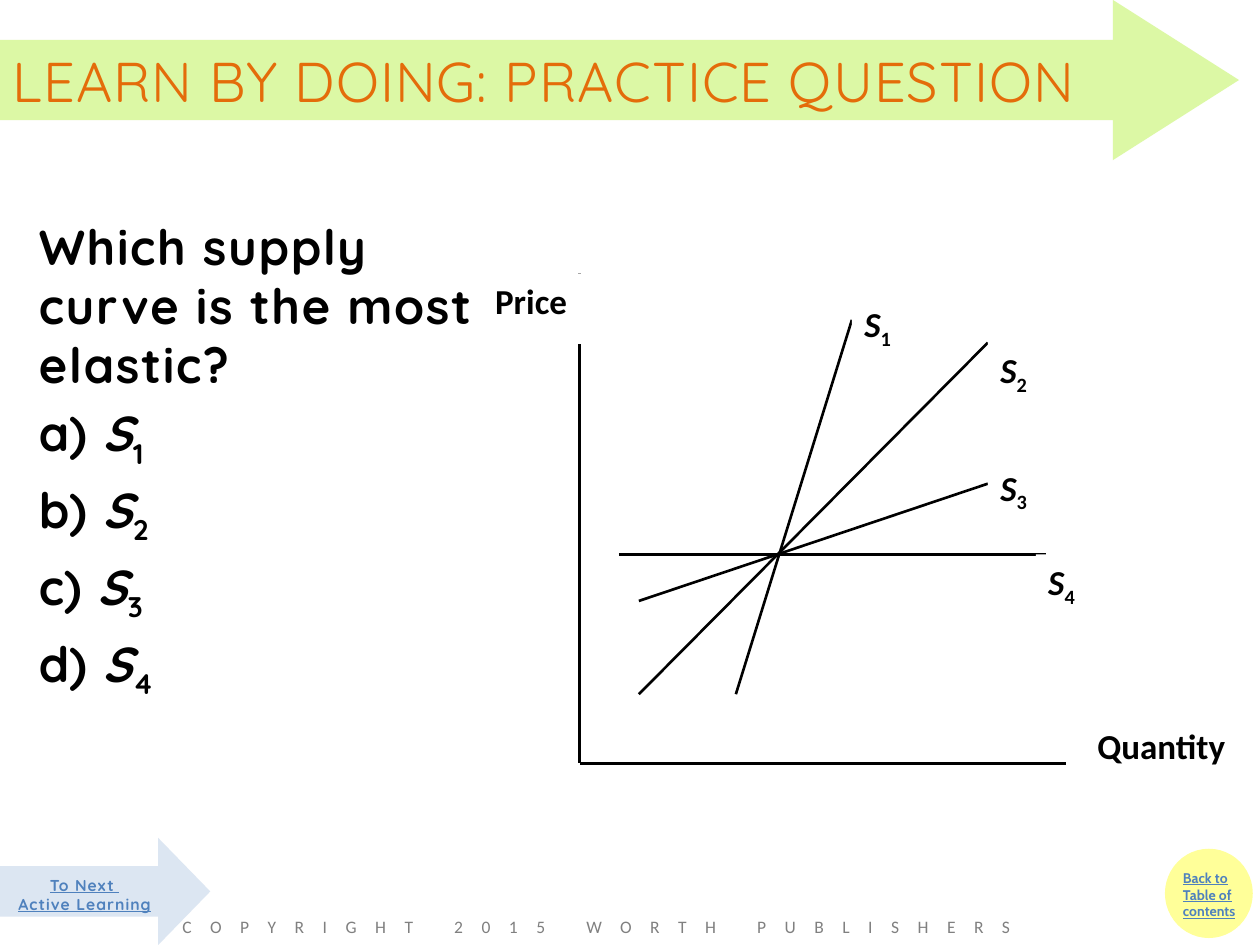
from dataclasses import dataclass
from lxml import etree
from pptx import Presentation
from pptx.dml.color import RGBColor
from pptx.enum.shapes import MSO_CONNECTOR, MSO_SHAPE
from pptx.enum.text import MSO_ANCHOR, PP_ALIGN
from pptx.oxml.ns import qn
from pptx.util import Pt

ARROW, OVAL, RECT = MSO_SHAPE.RIGHT_ARROW, MSO_SHAPE.OVAL, MSO_SHAPE.RECTANGLE
LINE = MSO_CONNECTOR.STRAIGHT
MIDDLE, TOP = MSO_ANCHOR.MIDDLE, MSO_ANCHOR.TOP
LEFT, CENTER = PP_ALIGN.LEFT, PP_ALIGN.CENTER


@dataclass(frozen=True)
class Theme:
    """Hold the colours, fonts and type sizes of the slide."""
    lime: str = "CBF577"
    orange: str = "E46C0A"
    yellow: str = "FFFF99"
    pale: str = "DCE6F2"
    link: str = "4F81BD"
    gray: str = "808080"
    black: str = "000000"
    white: str = "FFFFFF"
    round: str = "Quicksand"
    plain: str = "Calibri"
    small: str = "Cabin"
    title: int = 32
    body: int = 28
    label: int = 20
    foot: int = 10
    next: int = 9
    back: int = 8


T = Theme()


def color(text):
    """Turn a hex string into a colour."""
    return RGBColor.from_string(text)


def style(run, font, size, tint, bold=False, italic=False, line=False, gap=0, base=0):
    """Format one run."""
    face = run.font
    face.name, face.size, face.color.rgb = font, Pt(size), color(tint)
    face.bold, face.italic, face.underline = bold, italic, line
    props = run._r.get_or_add_rPr()
    if gap:
        props.set("spc", str(round(gap * 100)))
    if base:
        props.set("baseline", str(base * 1000))


def curve(para, num, lead="", **look):
    """Write an italic S with a subscript number."""
    parts = ((lead, False, 0), ("S", True, 0), (str(num), False, -25))
    for text, italic, base in parts:
        if text:
            run = para.add_run()
            run.text = text
            style(run, italic=italic, base=base, **look)


def block(slide, kind, box, fill):
    """Place a filled shape without outline or shadow."""
    shape = slide.shapes.add_shape(kind, *map(Pt, box))
    shape.shadow.inherit = False
    shape.fill.solid()
    shape.fill.fore_color.rgb = color(fill)
    shape.line.fill.background()
    return shape


def write(slide, box, lines, align=LEFT, wrap=True, **look):
    """Place a text box with one paragraph for each line."""
    frame = slide.shapes.add_textbox(*map(Pt, box)).text_frame
    frame.word_wrap = wrap
    frame.text = "\n".join(lines)
    for para in frame.paragraphs:
        para.alignment = align
        for run in para.runs:
            style(run, **look)
    return frame


def header(slide, box):
    """Draw the title arrow."""
    shape = block(slide, ARROW, box, T.lime)
    shape.adjustments[0], shape.adjustments[1] = 0.5, 0.787
    tone = shape.fill._xPr.find(".//" + qn("a:srgbClr"))
    etree.SubElement(tone, qn("a:alpha")).set("val", "66000")
    frame = shape.text_frame
    frame.vertical_anchor = MIDDLE
    frame.text = "LEARN BY DOING: PRACTICE QUESTION"
    para = frame.paragraphs[0]
    para.alignment = LEFT
    style(para.runs[0], T.round, T.title, T.orange, gap=0.6)


def back(slide, box):
    """Draw the round link to the contents."""
    left, top, wide, high = box
    shape = block(slide, OVAL, box, T.yellow)
    shape.line.color.rgb = color(T.yellow)
    shape.line.width = Pt(2)
    write(slide, (left + 2.2, top + 7.2, wide + 3.6, high - 0.8),
          ["Back to Table of contents"], font=T.small, size=T.back,
          tint=T.link, bold=True, line=True)


def onward(slide, box):
    """Draw the arrow link to the next activity."""
    left, top, wide, high = box
    shape = block(slide, ARROW, box, T.pale)
    shape.adjustments[0], shape.adjustments[1] = 0.472, 0.486
    write(slide, (left + 2.2, top + 18, wide - 28, high - 32.4),
          ["To Next ", "Active Learning"], CENTER, False, font=T.round,
          size=T.next, tint=T.link, bold=True, line=True, gap=0.6)


def quiz(slide, box):
    """Write the question and its lettered answers."""
    look = dict(font=T.round, size=T.body, tint=T.black, bold=True, gap=1)
    frame = write(slide, box, ["Which supply curve is the most elastic?"], **look)
    for num in range(1, 5):
        para = frame.add_paragraph()
        para.space_before = Pt(5.6)
        props = para._p.get_or_add_pPr()
        etree.SubElement(props, qn("a:buFont")).set("typeface", T.round)
        etree.SubElement(props, qn("a:buAutoNum")).set("type", "alphaLcParenR")
        curve(para, num, " ", **look)


def stroke(slide, start, end):
    """Draw a plain black line."""
    line = slide.shapes.add_connector(LINE, *map(Pt, start + end))
    line.line.color.rgb = color(T.black)
    line.line.width = Pt(1.5)
    etree.SubElement(line._element.spPr, qn("a:effectLst"))


def label(slide, box):
    """Place an empty white label and return its paragraph."""
    frame = block(slide, RECT, box, T.white).text_frame
    frame.vertical_anchor = TOP
    para = frame.paragraphs[0]
    para.alignment = LEFT
    para.space_after = Pt(10)
    return para


def graph(slide, box):
    """Draw the axes, the four supply curves and their labels."""
    left, top, wide, high = box
    look = dict(font=T.plain, size=T.label, tint=T.black, bold=True)

    def at(x, y):
        return left + x, top + y

    foot = at(55.4, 280)
    stroke(slide, at(55.4, 0), foot)
    stroke(slide, foot, at(333.4, 280))
    names = (("Price", at(0, 0) + (66.2, 40.3)),
             ("Quantity", at(wide - 100, high - 39.6) + (100, 39.6)))
    for text, spot in names:
        para = label(slide, spot)
        para.text = text
        style(para.runs[0], **look)
    curves = (((144.7, 240.5), (211, 26.6), (211, 13)),
              ((89.3, 240.5), (288.7, 39.6), (288.7, 39.6)),
              ((89.3, 187.2), (288.7, 120.2), (288.7, 106.6)),
              ((77.8, 160.6), (321.8, 160.6), (316.1, 160.6)))
    for start, end, _ in curves:
        stroke(slide, at(*start), at(*end))
    for num, (_, _, spot) in enumerate(curves, 1):
        curve(label(slide, at(*spot) + (44.6, 40)), num, **look)


def footer(slide, box):
    """Write the copyright line."""
    write(slide, box, ["COPYRIGHT 2015 WORTH PUBLISHERS"], font=T.plain,
          size=T.foot, tint=T.gray, gap=10.6)


def main():
    """Build and save the slide."""
    deck = Presentation()
    deck.slide_width, deck.slide_height = Pt(720), Pt(540)
    slide = deck.slides.add_slide(deck.slide_layouts[6])
    header(slide, (0, 0, 708, 91.5))
    back(slide, (666.7, 486, 48.2, 49))
    onward(slide, (0, 478.8, 120.2, 61.2))
    quiz(slide, (15.1, 120.2, 285.1, 320.4))
    footer(slide, (97.2, 519.8, 558.7, 18))
    graph(slide, (275.8, 156.2, 444.2, 293.8))
    deck.save("out.pptx")


if __name__ == "__main__":
    main()
